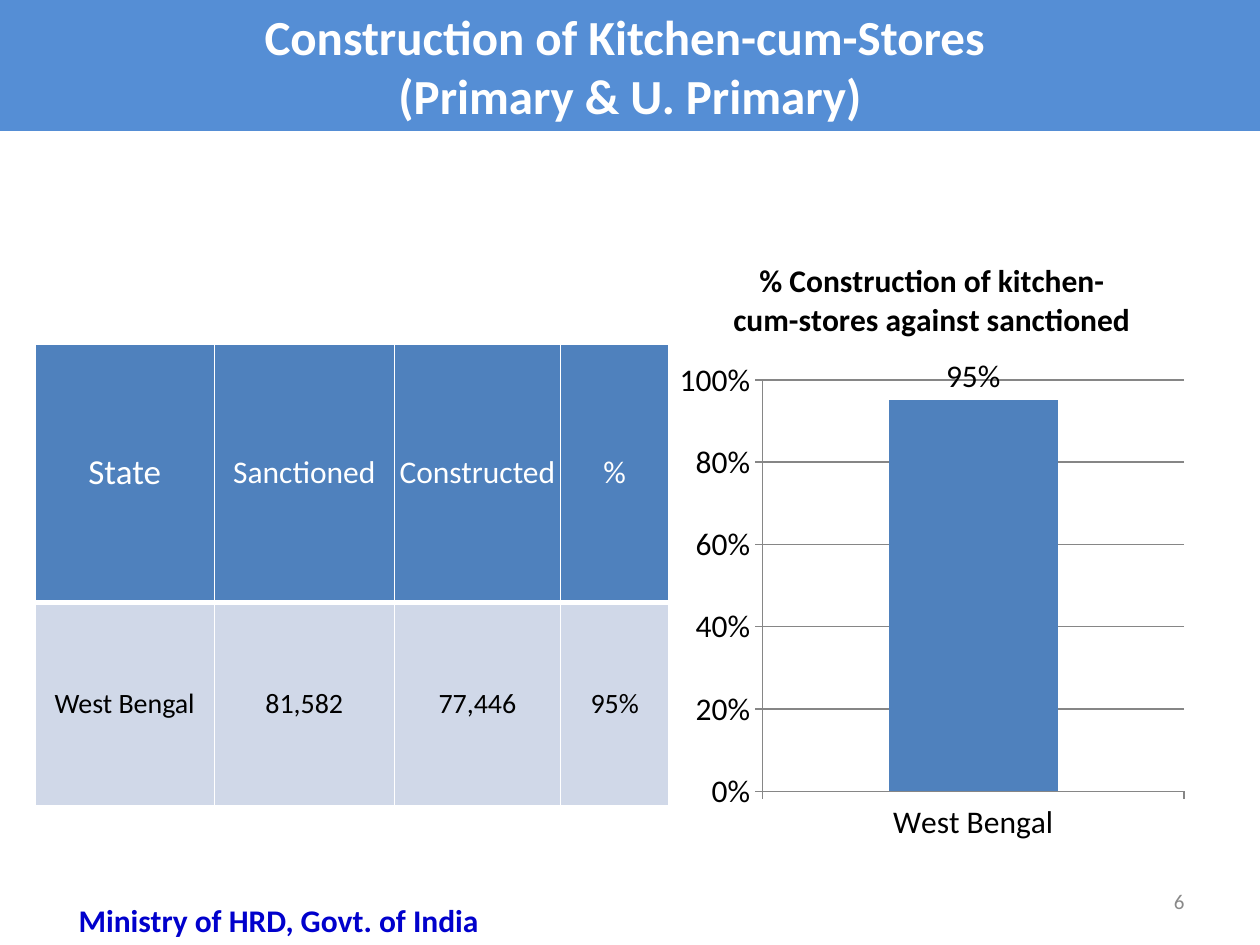
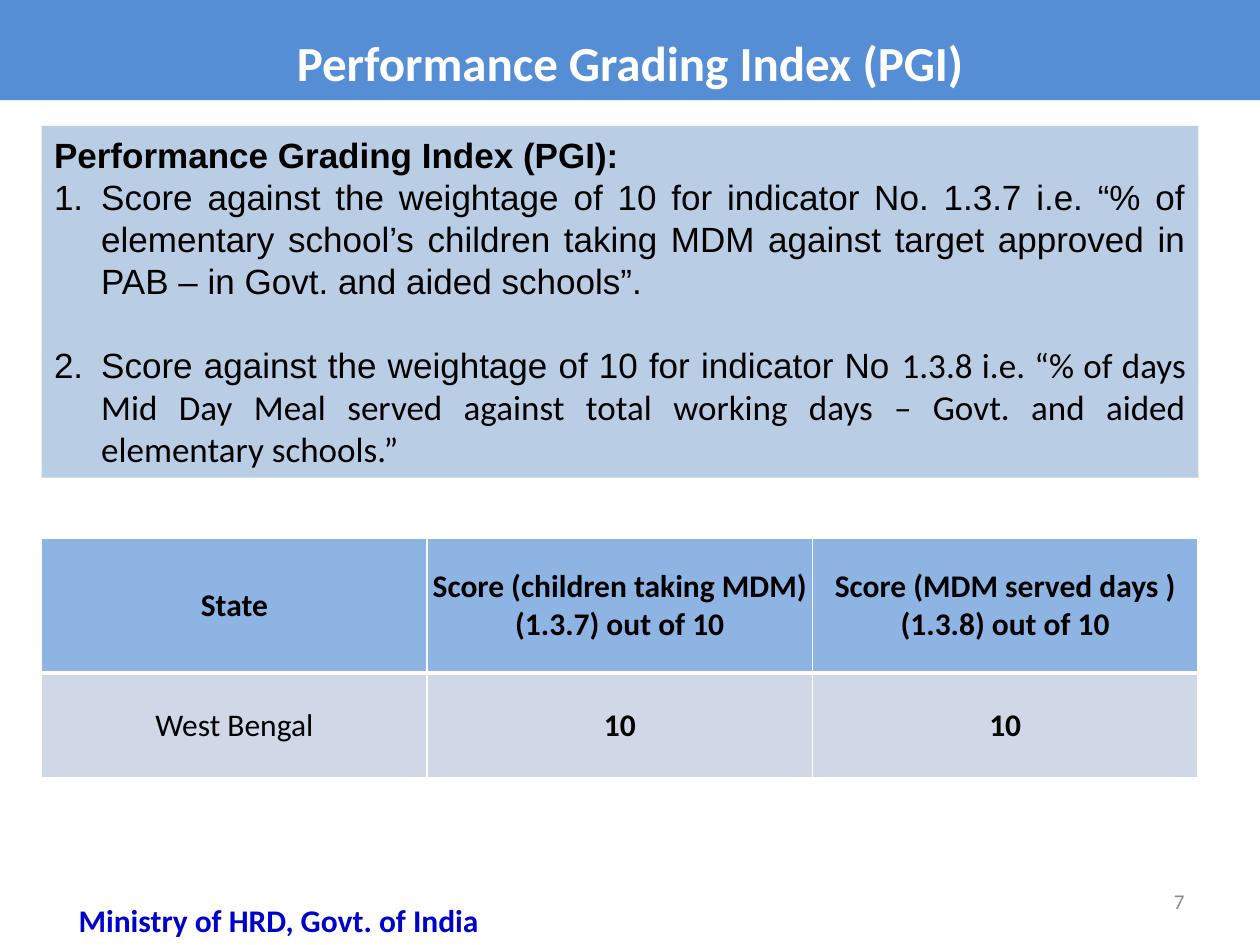
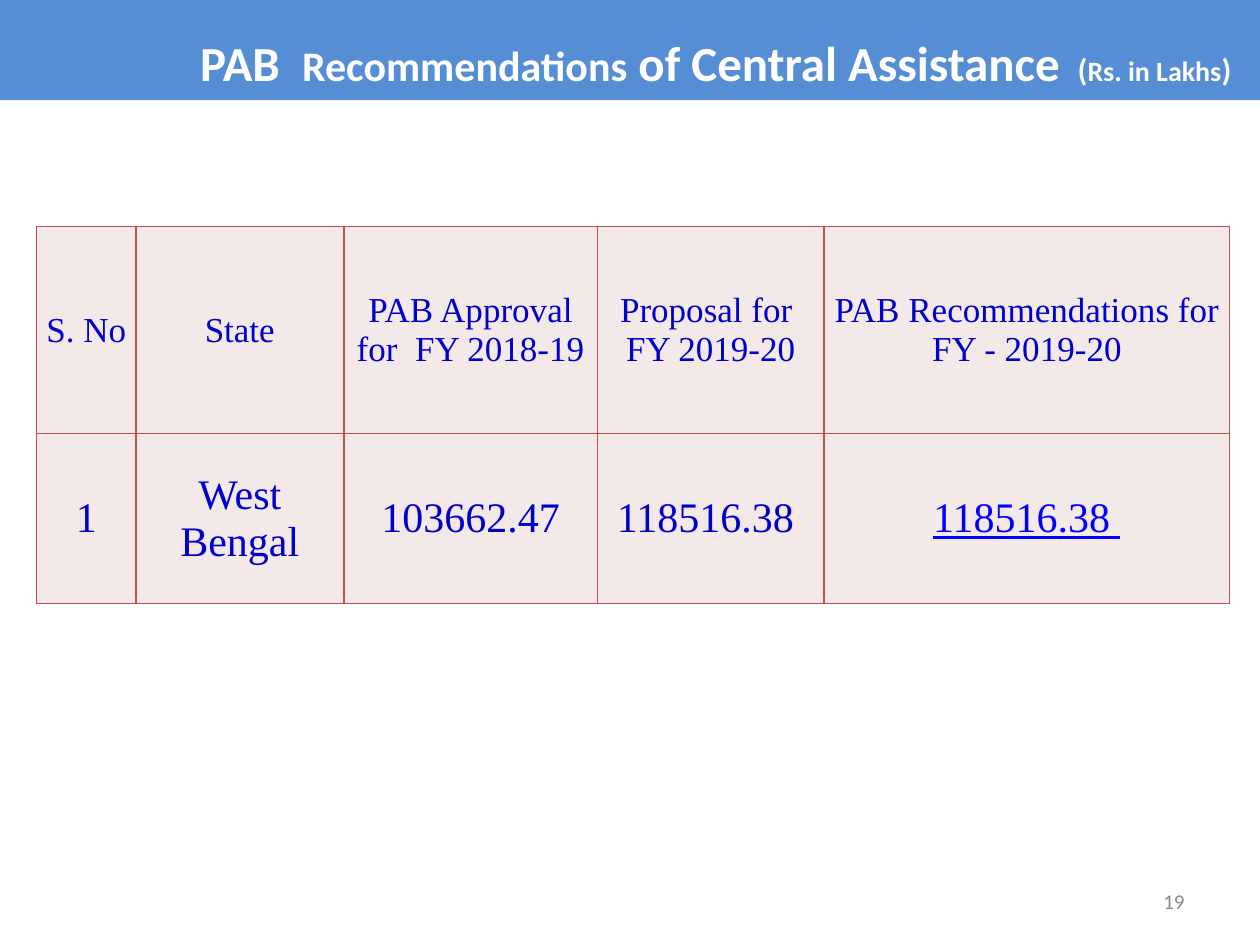
from lxml.etree import SubElement
from pptx import Presentation
from pptx.chart.data import CategoryChartData
from pptx.dml.color import RGBColor
from pptx.enum.chart import XL_CHART_TYPE as ChartType, XL_LABEL_POSITION as LabelPos
from pptx.enum.chart import XL_TICK_MARK as Tick
from pptx.enum.shapes import MSO_SHAPE as Shape
from pptx.enum.text import MSO_ANCHOR as Anchor, PP_ALIGN as Align
from pptx.oxml.ns import qn
from pptx.util import Cm, Pt

COLORS = {
    "band": "558ED5", "white": "FFFFFF", "black": "000000", "navy": "0000CC",
    "link": "0000FF", "gray": "898989", "grid": "868686", "blue": "4F81BD",
    "sky": "8EB4E3", "row": "D0D8E8", "panel": "B9CDE5", "rose": "F4E9E9",
    "red": "C0504D",
}


def rgb(name):
    return RGBColor.from_string(COLORS[name])


def set_font(font, size=None, color=None, bold=None, name=None, underline=None):
    if size:
        font.size = Pt(size)
    if color:
        font.color.rgb = rgb(color)
    if bold is not None:
        font.bold = bold
    if name:
        font.name = name
    if underline is not None:
        font.underline = underline


def set_border(cell, side, color, width):
    ln = SubElement(cell._tc.get_or_add_tcPr(), qn(f"a:ln{side}"), w=str(Pt(width)))
    fill = SubElement(ln, qn("a:solidFill"))
    SubElement(fill, qn("a:srgbClr"), val=COLORS[color])


class Deck:
    def __init__(self):
        self.prs = Presentation()
        self.prs.slide_width, self.prs.slide_height = Cm(25.4), Cm(19.05)
        self.s = None

    def slide(self, number):
        self.s = self.prs.slides.add_slide(self.prs.slide_layouts[6])
        self.text((18.21, 17.65, 5.92, 1.02), [str(number)], align=Align.RIGHT,
                  anchor=Anchor.MIDDLE, size=12, color="gray")

    def put_text(self, tf, paragraphs, align=Align.CENTER, spacing=None, name="Calibri", **style):
        for i, runs in enumerate(paragraphs):
            p = tf.add_paragraph() if i else tf.paragraphs[0]
            p.alignment = align
            if spacing:
                p.line_spacing = spacing
            set_font(p.font, name=name, **style)
            for text, own in [(runs, {})] if isinstance(runs, str) else runs:
                r = p.add_run()
                r.text = text
                set_font(r.font, **own)

    def text(self, box, paragraphs, anchor=Anchor.TOP, wrap=True, **style):
        tf = self.s.shapes.add_textbox(*map(Cm, box)).text_frame
        tf.word_wrap, tf.vertical_anchor = wrap, anchor
        self.put_text(tf, paragraphs, **style)

    def panel(self, box, fill, paragraphs, **style):
        sp = self.s.shapes.add_shape(Shape.RECTANGLE, *map(Cm, box))
        sp.shadow.inherit = False
        sp.fill.solid()
        sp.fill.fore_color.rgb = rgb(fill)
        sp.line.fill.background()
        tf = sp.text_frame
        tf.word_wrap, tf.vertical_anchor = True, Anchor.MIDDLE
        self.put_text(tf, paragraphs, **style)
        return tf

    def title(self, paragraphs, height=2.02, spacing=1.4):
        self.panel((0, 0, 25.4, height), "band", paragraphs, spacing=spacing,
                   size=28, color="white", bold=True)

    def ministry(self):
        self.text((0.64, 18.03, 9.96, 1.02), ["Ministry of HRD, Govt. of India"],
                  size=18, color="navy", bold=True)

    def number_list(self, paragraphs, gap):
        for i, p in enumerate(paragraphs):
            pPr = p._p.get_or_add_pPr()
            pPr.set("marL", str(Cm(0.95)))
            pPr.set("indent", str(-Cm(0.95)))
            bullet = pPr.makeelement(qn("a:buAutoNum"), {"type": "arabicPeriod"})
            pPr.insert_element_before(bullet, "a:tabLst", "a:defRPr", "a:extLst")
            if i:
                p.space_before = Pt(gap)

    def table(self, left, top, widths, rows, border="white", rule=3, inset=0.02):
        heights = [height for height, *_ in rows]
        tbl = self.s.shapes.add_table(len(rows), len(widths), Cm(left), Cm(top),
                                      Cm(sum(widths)), Cm(sum(heights))).table
        for col, width in zip(tbl.columns, widths):
            col.width = Cm(width)
        for i, (height, fill, style, cells) in enumerate(rows):
            tbl.rows[i].height = Cm(height)
            for j, paragraphs in enumerate(cells):
                cell = tbl.cell(i, j)
                cell.vertical_anchor = Anchor.MIDDLE
                cell.margin_left = cell.margin_right = Cm(inset)
                cell.margin_top = cell.margin_bottom = 0
                for side in "LRTB":
                    inner = (side == "B" and i == 0) or (side == "T" and i == 1)
                    set_border(cell, side, border, rule if inner else 1)
                cell.fill.solid()
                cell.fill.fore_color.rgb = rgb(fill)
                self.put_text(cell.text_frame, paragraphs, **style)

    def column_chart(self, box, title, categories, values):
        data = CategoryChartData(number_format="0%")
        data.categories = categories
        data.add_series(title, values)
        chart = self.s.shapes.add_chart(ChartType.COLUMN_CLUSTERED, *map(Cm, box), data).chart
        set_font(chart.font, 18, "black", name="Calibri")
        chart.has_legend = False
        self.put_text(chart.chart_title.text_frame, [title], size=18, color="black", bold=True)
        chart.chart_title.include_in_layout = False
        axis = chart.value_axis
        axis.minimum_scale, axis.maximum_scale, axis.major_unit = 0, 1, 0.2
        axis.tick_labels.number_format = "0%"
        axis.tick_labels.number_format_is_linked = False
        for line in (axis.format.line, axis.major_gridlines.format.line,
                     chart.category_axis.format.line):
            line.color.rgb = rgb("grid")
            line.width = Pt(0.75)
        axis.major_tick_mark = chart.category_axis.major_tick_mark = Tick.OUTSIDE
        plot = chart.plots[0]
        plot.gap_width, plot.vary_by_categories = 150, False
        fill = plot.series[0].format.fill
        fill.solid()
        fill.fore_color.rgb = rgb("blue")
        plot.has_data_labels = True
        labels = plot.data_labels
        labels.show_value, labels.position = True, LabelPos.OUTSIDE_END
        labels.number_format, labels.number_format_is_linked = "0%", False
        set_font(labels.font, 18, "black", name="Calibri")


def kitchen_stores(d):
    d.slide(6)
    d.title(["Construction of Kitchen-cum-Stores ", "(Primary & U. Primary)"], 2.64, None)
    d.table(0.71, 6.93, [3.61, 3.63, 3.35, 2.18], [
        (5.21, "blue", dict(size=18, color="white"),
         [[[("State", dict(size=20))]], ["Sanctioned"], ["Constructed"], ["%"]]),
        (4.11, "row", dict(size=16, color="black"),
         [["West Bengal"], ["81,582"], ["77,446"], ["95%"]]),
    ])
    d.ministry()
    d.column_chart((13.49, 4.72, 10.59, 12.5),
                   "% Construction of kitchen-cum-stores against sanctioned",
                   ["West Bengal"], [0.95])


def grading_index(d):
    d.slide(7)
    d.title(["Performance Grading Index (PGI)"])
    tf = d.panel((0.84, 2.54, 23.32, 7.09), "panel", [
        [("Performance Grading Index (PGI):", dict(bold=True))],
        "Score against the weightage of 10 for indicator No. 1.3.7 i.e. “% of elementary "
        "school’s children taking MDM against target approved in PAB – in Govt. and aided "
        "schools”.",
        [("Score against the weightage of 10 for indicator No ", dict(name="Arial")),
         ("1.3.8 i.e. “% of days Mid Day Meal served against total working days – Govt. and "
          "aided elementary schools.”", dict(name="Calibri"))],
    ], align=Align.JUSTIFY, name="Arial", size=20, color="black")
    d.number_list(tf.paragraphs[1:], 24)
    bold = dict(size=18, color="black", bold=True)
    d.table(0.84, 10.85, [7.77] * 3, [
        (2.72, "sky", bold,
         [["State"], ["Score (children taking MDM)", "(1.3.7) out of 10"],
          ["Score (MDM served days )", "(1.3.8) out of 10"]]),
        (2.11, "row", bold, [[[("West Bengal", dict(bold=False))]], ["10"], ["10"]]),
    ])
    d.ministry()


def central_assistance(d):
    d.slide(19)
    d.title([[("PAB  ", {}), ("Recommendations", dict(size=24)),
              (" of Central Assistance", {})]])
    serif = dict(name="Times New Roman", color="navy")
    d.table(0.74, 4.57, [2, 4.19, 5.11, 4.57, 8.18], [
        (4.17, "rose", dict(serif, size=20),
         [["S. No"], ["State"], ["PAB Approval for  FY 2018-19 "],
          ["Proposal for ", "FY 2019-20"], ["PAB Recommendations for ", "FY - 2019-20"]]),
        (3.43, "rose", dict(serif, size=24),
         [["1"], ["West Bengal"], ["103662.47"], ["118516.38 "],
          [[("118516.38 ", dict(color="link", underline=True))]]]),
    ], border="red", rule=1, inset=0.18)
    d.text((21.46, 0.89, 3.63, 1.02),
           [[("(", {}), ("Rs. in Lakhs", dict(size=16)), (")", {})]],
           wrap=False, size=18, color="white", bold=True)


def main():
    d = Deck()
    kitchen_stores(d)
    grading_index(d)
    central_assistance(d)
    d.prs.save("out.pptx")


if __name__ == "__main__":
    main()
